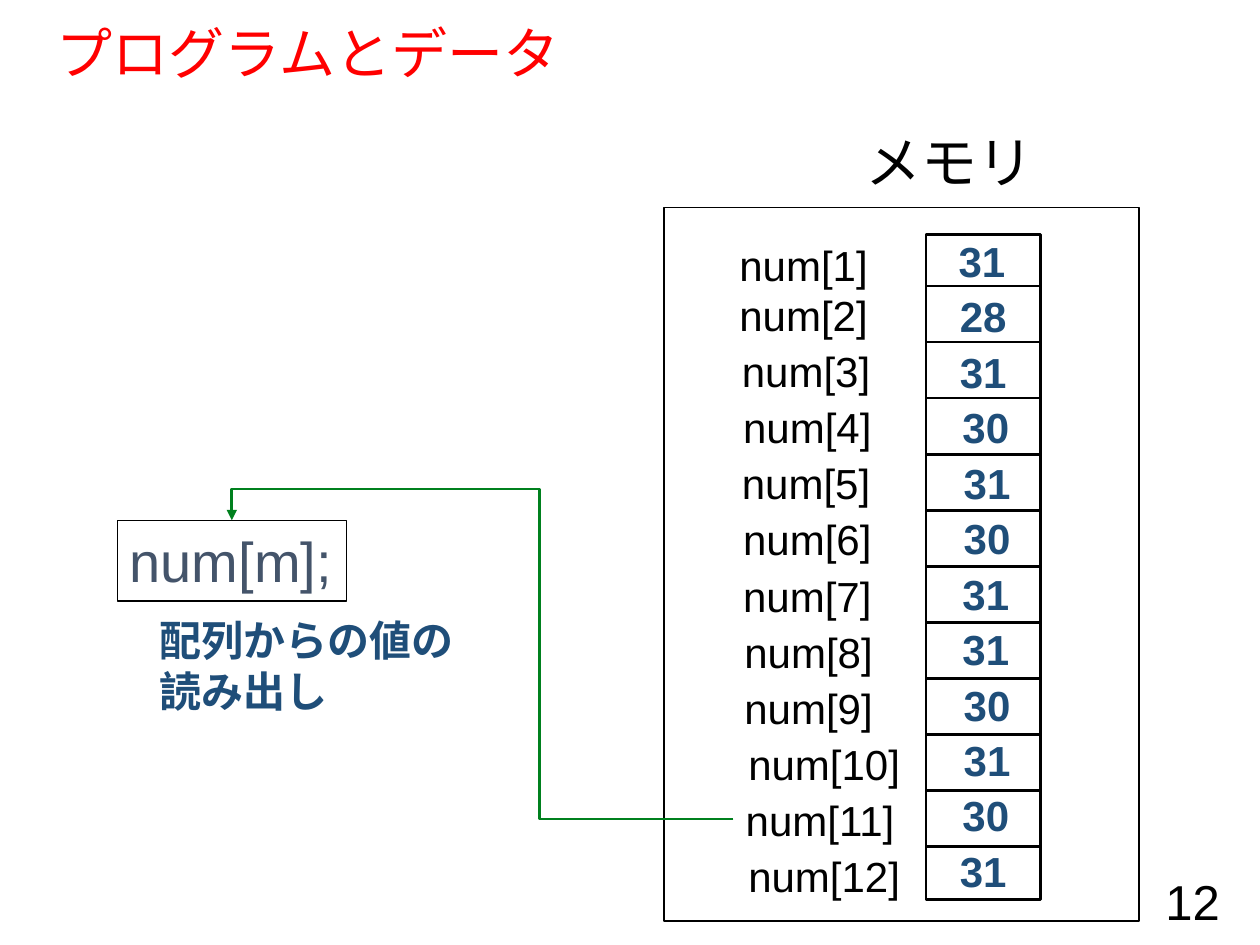
from pptx import Presentation, util as u
from pptx.dml.color import RGBColor
from pptx.enum import shapes, text
from pptx.oxml import parse_xml
from pptx.oxml.ns import nsdecls, qn

BLACK, NAVY, GREEN = "000000", "1F4E79", "00801E"
deck = Presentation()
deck.slide_width, deck.slide_height = u.Inches(10), u.Inches(7.5)
slide = deck.slides.add_slide(deck.slide_layouts[5])
items = slide.shapes


def write(shape, lines, size, color, bold=False, wrap=False, align="LEFT", anchor="TOP"):
    frame = shape.text_frame
    frame.word_wrap = wrap
    frame.auto_size = text.MSO_AUTO_SIZE.NONE
    frame.vertical_anchor = text.MSO_ANCHOR[anchor]
    for n, line in enumerate(lines):
        para = frame.add_paragraph() if n else frame.paragraphs[0]
        para.alignment = text.PP_ALIGN[align]
        run = para.add_run()
        run.text = line
        run.font.name, run.font.size, run.font.bold = "Arial", u.Pt(size), bold
        run.font.color.rgb = RGBColor.from_string(color)


def link(kind, ends, color):
    line = items.add_connector(kind, *[u.Inches(v) for v in ends])
    line.line.color.rgb = RGBColor.from_string(color)
    line.line.width = u.Pt(1.5)
    line._element.spPr.append(parse_xml(f"<a:effectLst {nsdecls('a')}/>"))
    return line


title = items.title
title.left, title.top = u.Inches(0.35), u.Inches(0.19)
title.width, title.height = u.Inches(9.25), u.Inches(0.51)
write(title, ["プログラムとデータ"], 32, "FF0000", wrap=True, anchor="MIDDLE")
title.text_frame.paragraphs[0].line_spacing = 0.9

page = items.add_textbox(u.Inches(7.53), u.Inches(6.95), u.Inches(2.25), u.Inches(0.4))
write(page, ["12"], 28, BLACK, wrap=True, align="RIGHT", anchor="MIDDLE")
head = items.add_textbox(u.Inches(6.77), u.Inches(0.96), u.Inches(1.55), u.Inches(0.64))
write(head, ["メモリ"], 32, BLACK)
note = items.add_textbox(u.Inches(1.17), u.Inches(4.83), u.Inches(2.53), u.Inches(0.9))
write(note, ["配列からの値の", "読み出し"], 24, NAVY, bold=True)

boxes = []
for x, y, w, h, weight in [
    (5.27, 1.65, 3.77, 5.66, 0.75),
    (7.35, 1.86, 0.91, 5.28, 1.5),
    (0.93, 4.13, 1.82, 0.64, 0.75),
]:
    box = items.add_shape(shapes.MSO_SHAPE.RECTANGLE, u.Inches(x), u.Inches(y), u.Inches(w), u.Inches(h))
    box.shadow.inherit = False
    box.fill.background()
    box.line.color.rgb = RGBColor.from_string(BLACK)
    box.line.width = u.Pt(weight)
    boxes.append(box)
write(boxes[-1], ["num[m];"], 32, "44546A")

arrow = link(shapes.MSO_CONNECTOR.ELBOW, (5.82, 6.5, 1.84, 4.13), GREEN)
geom = arrow._element.spPr.find(qn("a:prstGeom"))
geom.set("prst", "bentConnector4")
for old in list(geom):
    geom.remove(old)
geom.append(parse_xml(
    f'<a:avLst {nsdecls("a")}><a:gd name="adj1" fmla="val 38600"/>'
    '<a:gd name="adj2" fmla="val 110500"/></a:avLst>'))
arrow.line._get_or_add_ln().append(parse_xml(f'<a:tailEnd {nsdecls("a")} type="triangle"/>'))

step = 0.445
days = [31, 28, 31, 30, 31, 30, 31, 31, 30, 31, 30, 31]
names = [5.77, 5.77, 5.79, 5.8, 5.79, 5.8, 5.8, 5.81, 5.81, 5.84, 5.82, 5.84]
cells = [7.51, 7.52, 7.52, 7.54, 7.55, 7.55, 7.54, 7.54, 7.55, 7.55, 7.54, 7.52]
for n, (day, left, mid) in enumerate(zip(days, names, cells)):
    if n:
        edge = 2.27 + step * (n - 1)
        link(shapes.MSO_CONNECTOR.STRAIGHT, (7.35, edge, 8.27, edge), BLACK)
    top = 2.25 + step * (n - 1) if n else 1.85
    wide = 1.23 if n < 9 else 1.42
    name = items.add_textbox(u.Inches(left), u.Inches(top), u.Inches(wide), u.Inches(0.51))
    write(name, [f"num[{n + 1}]"], 24, BLACK)
    cell = items.add_textbox(u.Inches(mid), u.Inches(1.82 + 0.44 * n), u.Inches(0.58), u.Inches(0.51))
    write(cell, [str(day)], 24, NAVY, bold=True)

deck.save("out.pptx")
